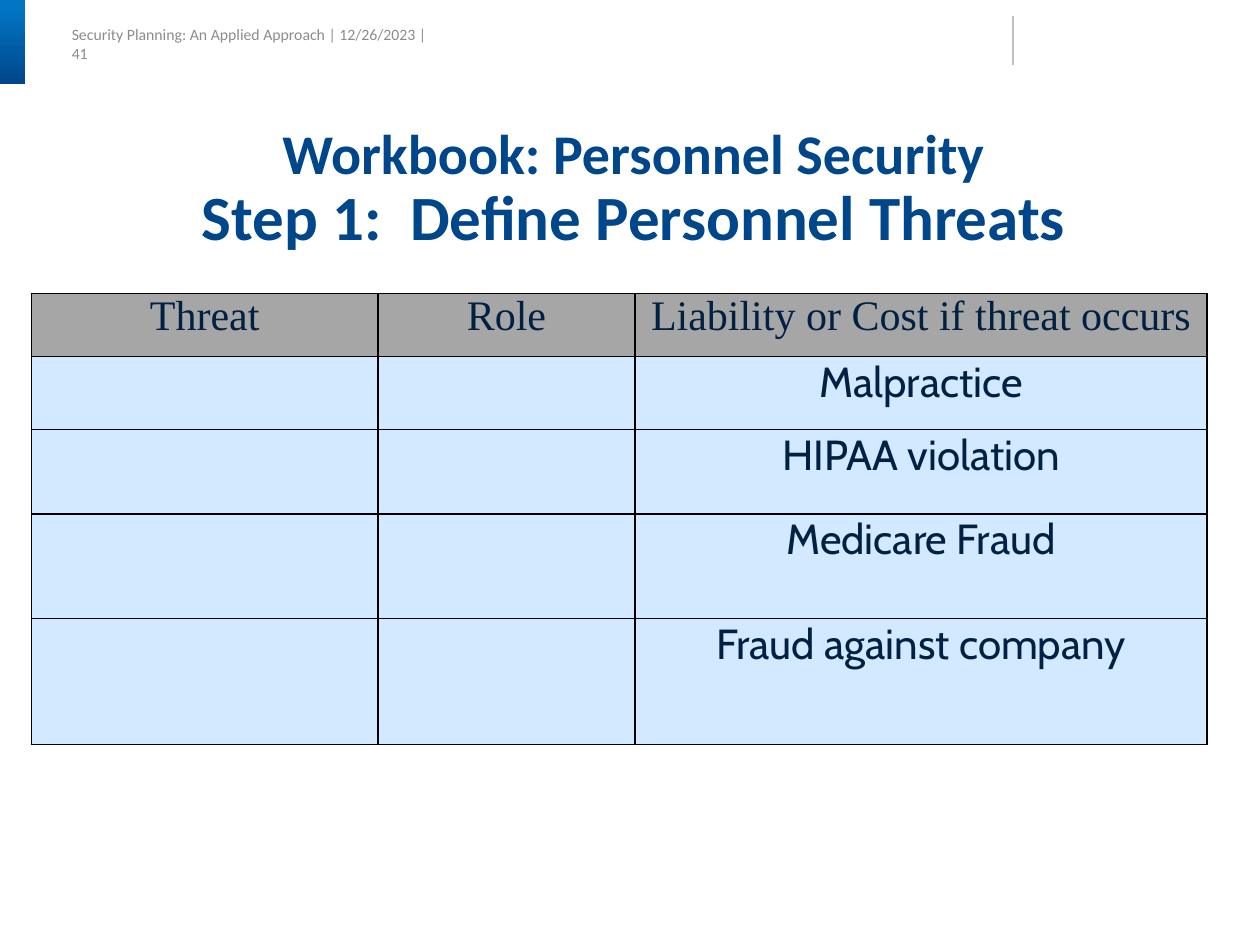
from lxml import etree
from pptx import Presentation
from pptx.dml.color import RGBColor
from pptx.enum.shapes import MSO_CONNECTOR, MSO_SHAPE
from pptx.enum.text import MSO_ANCHOR, PP_ALIGN
from pptx.oxml.ns import qn
from pptx.util import Inches, Pt

CENTER = PP_ALIGN.CENTER
TOP, MIDDLE = MSO_ANCHOR.TOP, MSO_ANCHOR.MIDDLE
RECTANGLE, STRAIGHT = MSO_SHAPE.RECTANGLE, MSO_CONNECTOR.STRAIGHT

HEADER_TEXT = "Security Planning: An Applied Approach | 12/26/2023 | 41"
TITLE_LINES = [("Workbook: Personnel Security", 32), ("Step 1:  Define Personnel Threats", 36)]
COLUMNS = [("Threat", 2.75), ("Role", 2.04), ("Liability or Cost if threat occurs", 4.54)]
HEADING_HEIGHT = 0.5
LIABILITIES = [
    ("Malpractice", 0.58),
    ("HIPAA violation", 0.67),
    ("Medicare Fraud", 0.83),
    ("Fraud against company", 1),
]
ACCENT_STOPS = [("0176C3", 0.1), ("00468A", 1)]
NO_MARGINS = dict(margin_left=0, margin_top=0, margin_right=0, margin_bottom=0)


def color(value):
    return RGBColor.from_string(value)


def apply(target, **values):
    for name, value in values.items():
        setattr(target, name, value)


def style_font(font, name, size, rgb, **values):
    apply(font, name=name, size=Pt(size), **values)
    font.color.rgb = color(rgb)


def box(*lengths):
    return [Inches(length) for length in lengths]


def add_borders(cell):
    properties = cell._tc.get_or_add_tcPr()
    for position, side in enumerate(("a:lnL", "a:lnR", "a:lnT", "a:lnB")):
        border = etree.Element(qn(side), w=str(Pt(1)))
        fill = etree.SubElement(border, qn("a:solidFill"))
        etree.SubElement(fill, qn("a:srgbClr"), val="000000")
        properties.insert(position, border)


def fill_cell(cell, text, fill, font_name):
    apply(cell, **NO_MARGINS)
    cell.fill.solid()
    cell.fill.fore_color.rgb = color(fill)
    add_borders(cell)
    if text:
        paragraph = cell.text_frame.paragraphs[0]
        apply(paragraph, alignment=CENTER, space_before=Pt(3))
        run = paragraph.add_run()
        run.text = text
        style_font(run.font, font_name, 24, "002143")


def add_header(slide):
    header = slide.shapes.add_textbox(*box(0.57, 0.23, 2.84, 0.23)).text_frame
    apply(header, word_wrap=False, vertical_anchor=MIDDLE, **NO_MARGINS)
    run = header.paragraphs[0].add_run()
    run.text = HEADER_TEXT
    style_font(run.font, "Calibri", 9, "8C8C8C")

    accent = slide.shapes.add_shape(RECTANGLE, *box(0, 0, 0.2, 0.67))
    accent.shadow.inherit = False
    accent.line.fill.background()
    accent.fill.gradient()
    accent.fill.gradient_angle = 270
    for stop, (rgb, position) in zip(accent.fill.gradient_stops, ACCENT_STOPS):
        stop.color.rgb = color(rgb)
        stop.position = position

    divider = slide.shapes.add_connector(STRAIGHT, *box(8.04, 0.13, 8.04, 0.52))
    divider.line.color.rgb = color("BFBFBF")
    divider.line.width = Pt(0.75)
    etree.SubElement(divider._element.spPr, qn("a:effectLst"))


def add_title(slide):
    title = slide.shapes.title
    left, top, width, height = box(0.57, 1, 8.92, 1.03)
    apply(title, left=left, top=top, width=width, height=height)
    apply(title.text_frame, word_wrap=True, vertical_anchor=TOP, **NO_MARGINS)
    paragraph = title.text_frame.paragraphs[0]
    apply(paragraph, alignment=CENTER, line_spacing=0.9)
    for index, (text, size) in enumerate(TITLE_LINES):
        if index:
            paragraph.add_line_break()
        run = paragraph.add_run()
        run.text = text
        style_font(run.font, "Calibri", size, "00468A", bold=True)


def add_threat_table(slide):
    headings, widths = zip(*COLUMNS)
    heights = [HEADING_HEIGHT] + [height for _, height in LIABILITIES]
    table = slide.shapes.add_table(
        len(heights), len(widths), *box(0.25, 2.33, sum(widths), sum(heights))
    ).table
    for column, width in zip(table.columns, widths):
        column.width = Inches(width)
    for row, height in zip(table.rows, heights):
        row.height = Inches(height)
    for column, heading in enumerate(headings):
        fill_cell(table.cell(0, column), heading, "A6A6A6", "Times New Roman")
    for row, (liability, _) in enumerate(LIABILITIES, 1):
        for column, text in enumerate(("", "", liability)):
            fill_cell(table.cell(row, column), text, "D3E9FF", "Cabin")


def main():
    presentation = Presentation()
    apply(presentation, slide_width=Inches(10), slide_height=Inches(7.5))
    slide = presentation.slides.add_slide(presentation.slide_layouts[5])
    add_header(slide)
    add_title(slide)
    add_threat_table(slide)
    presentation.save("out.pptx")


if __name__ == "__main__":
    main()
